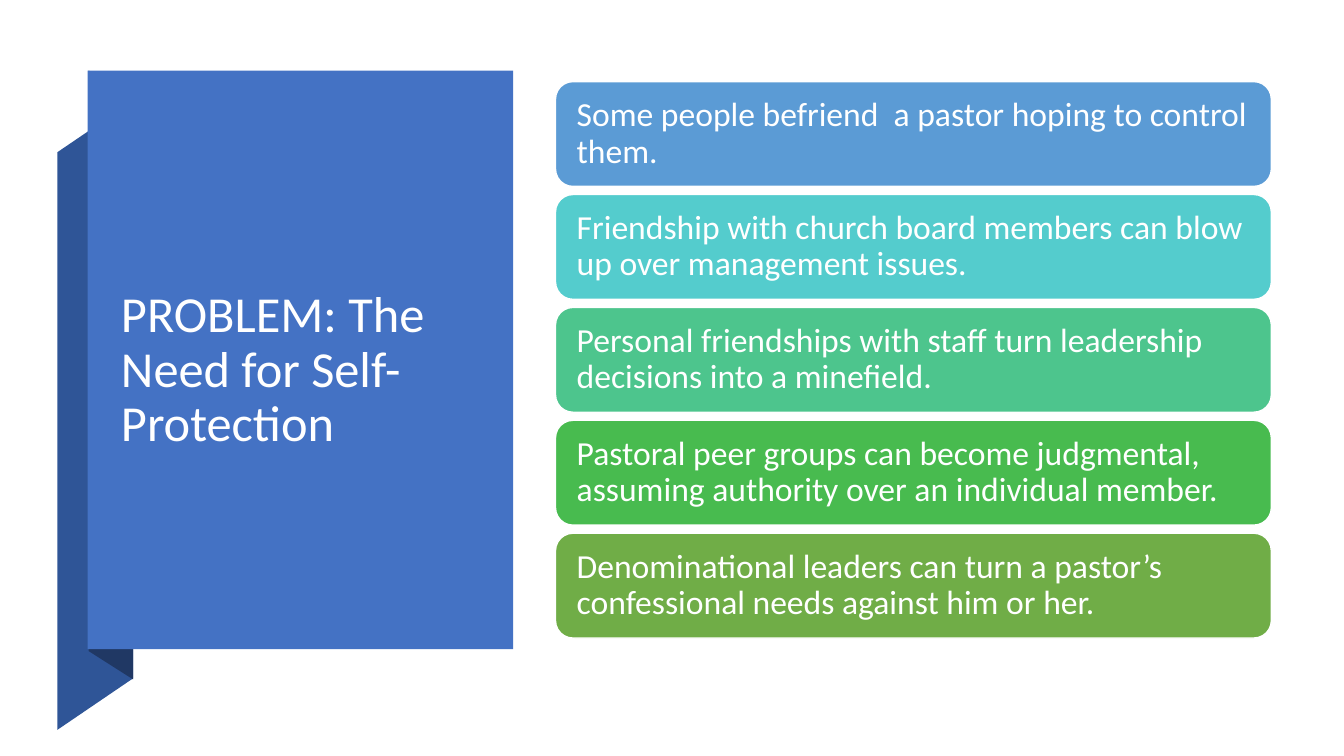
import pptx
import pptx.util
import pptx.dml.color
import pptx.enum.shapes
import pptx.enum.text

PX = 9144  # EMU per px, 100 px to the inch

COLORS = {
    "white": "FFFFFF",
    "panel": "4472C4",
    "ribbon": "2F5597",
    "fold": "203864",
}

CARDS = [
    ("5B9BD5", "Some people befriend  a pastor hoping to control them."),
    ("54CCCD", "Friendship with church board members can blow up over management issues."),
    ("4DC58D", "Personal friendships with staff turn leadership decisions into a minefield."),
    ("48BB4F", "Pastoral peer groups can become judgmental, assuming authority over an individual member."),
    ("70AD47", "Denominational leaders can turn a pastor’s confessional needs against him or her."),
]
CARD_LEFT, CARD_TOP, CARD_WIDTH, CARD_HEIGHT, CARD_PITCH = 551, 81, 710, 104, 112


def rgb(value):
    return pptx.dml.color.RGBColor.from_string(value)


def paint(shape, fill, line=None):
    shape.shadow.inherit = False
    shape.fill.solid()
    shape.fill.fore_color.rgb = rgb(fill)
    if line:
        shape.line.color.rgb = rgb(line)
        shape.line.width = pptx.util.Pt(1)
    else:
        shape.line.fill.background()


def add_outline(s, points, fill):
    builder = s.shapes.build_freeform(*points[0], scale=PX)
    builder.add_line_segments(points[1:], close=True)
    paint(builder.convert_to_shape(), fill)


def add_box(s, kind, left, top, width, height, fill, line=None):
    box = s.shapes.add_shape(kind, left * PX, top * PX, width * PX, height * PX)
    paint(box, fill, line)
    return box


def write(shape, text, size, margin):
    tf = shape.text_frame
    frame_format = {
        "word_wrap": True,
        "auto_size": pptx.enum.text.MSO_AUTO_SIZE.NONE,
        "vertical_anchor": pptx.enum.text.MSO_ANCHOR.MIDDLE,
        "margin_left": margin * PX,
        "margin_right": margin * PX,
    }
    for name, value in frame_format.items():
        setattr(tf, name, value)
    p = tf.paragraphs[0]
    p.alignment = pptx.enum.text.PP_ALIGN.LEFT
    p.line_spacing = 0.9
    r = p.add_run()
    r.text = text
    for name, value in {"name": "Calibri", "size": pptx.util.Pt(size)}.items():
        setattr(r.font, name, value)
    r.font.color.rgb = rgb(COLORS["white"])


def place_title(s, panel, text):
    title = s.shapes.title
    place = {"left": 110, "top": 171, "width": 335, "height": 394}
    for name, value in place.items():
        setattr(title, name, value * PX)
    panel.element.addnext(title.element)  # bring in front of the panel
    write(title, text, 36, 10)


def main():
    prs = pptx.Presentation()
    prs.slide_width, prs.slide_height = 1333 * PX, 750 * PX
    s = prs.slides.add_slide(prs.slide_layouts[5])
    shapes = pptx.enum.shapes.MSO_SHAPE

    # Folded ribbon behind the title panel
    add_outline(s, [(57, 724), (132, 673), (132, 100), (57, 151)], COLORS["ribbon"])
    add_outline(s, [(88, 646), (132, 674), (132, 99), (88, 70)], COLORS["fold"])

    # Title panel
    panel = add_box(s, shapes.RECTANGLE, 87, 70, 422, 574, COLORS["panel"])
    place_title(s, panel, "PROBLEM: The Need for Self-Protection")

    # Stack of cards
    for i, (color, text) in enumerate(CARDS):
        card = add_box(s, shapes.ROUNDED_RECTANGLE, CARD_LEFT, CARD_TOP + i * CARD_PITCH,
                       CARD_WIDTH, CARD_HEIGHT, color, COLORS["white"])
        write(card, text, 24, 16)

    prs.save("out.pptx")


if __name__ == "__main__":
    main()
